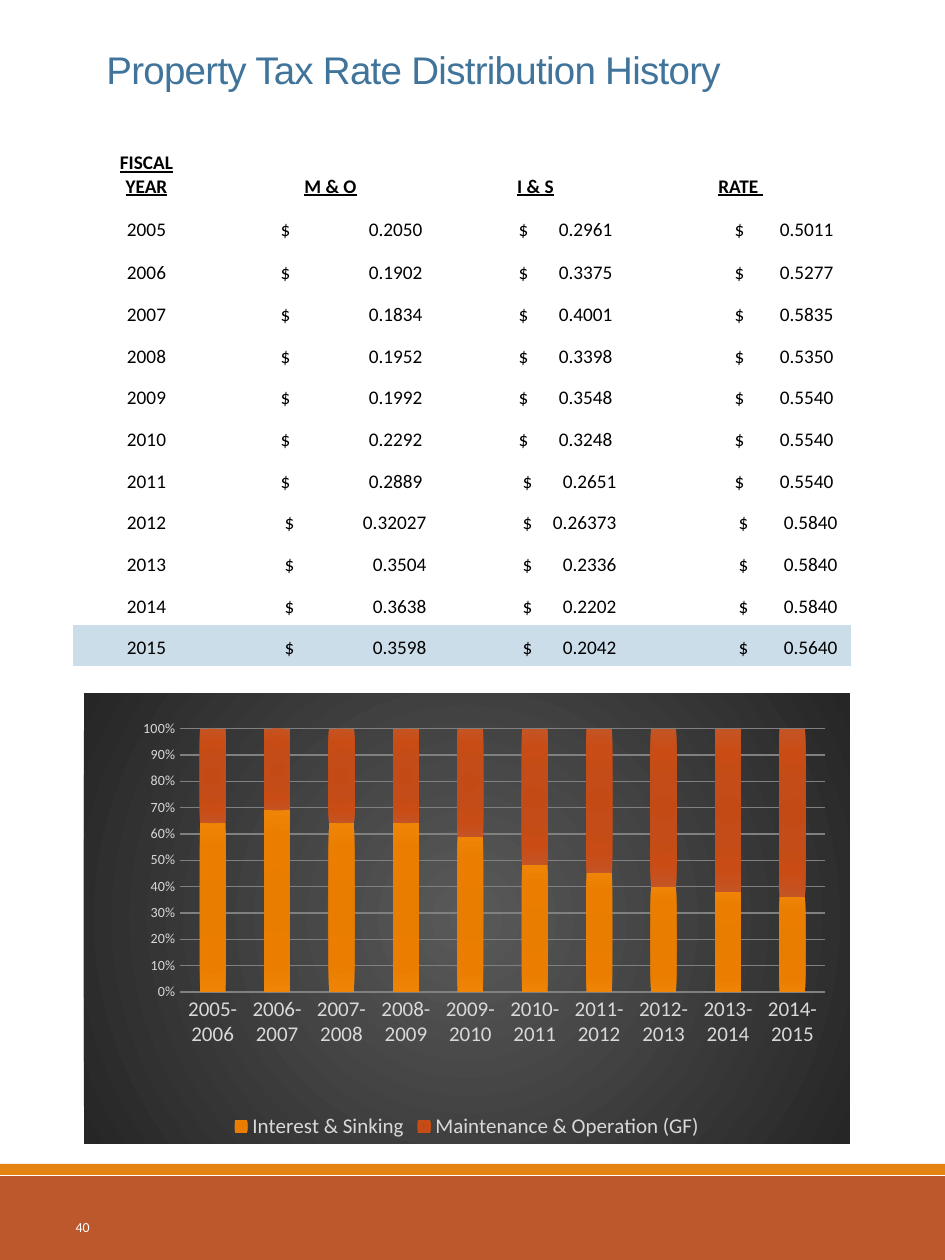
from lxml import etree
from pptx import Presentation
from pptx import util as u
from pptx.chart import data as chart_data
from pptx.dml.color import RGBColor
from pptx.enum import chart as ch, shapes, text
from pptx.oxml import ns, parse_xml

SCALE = 914400 / 126
WHITE = RGBColor(0xFF, 0xFF, 0xFF)
BLACK = RGBColor(0x00, 0x00, 0x00)
RUST = RGBColor(0xBD, 0x58, 0x2C)
ORANGE = RGBColor(0xE4, 0x83, 0x12)
TITLE_BLUE = RGBColor(0x40, 0x74, 0x9B)
HIGHLIGHT = RGBColor(0xCC, 0xDD, 0xEA)
LIGHT_GRAY = RGBColor(0xD9, 0xD9, 0xD9)
GRID_GRAY = RGBColor(0x80, 0x80, 0x80)
BACKDROP_STOPS = [(0, RGBColor(0x59, 0x59, 0x59)), (100, RGBColor(0x26, 0x26, 0x26))]
SINKING_STOPS = [(0, RGBColor(0xE5, 0x7B, 0x00)), (34, RGBColor(0xE8, 0x7D, 0x00)),
                 (70, RGBColor(0xEB, 0x7E, 0x00)), (100, RGBColor(0xEF, 0x84, 0x07))]
OPERATION_STOPS = [(0, RGBColor(0xC4, 0x4A, 0x15)), (34, RGBColor(0xC3, 0x4C, 0x18)),
                   (70, RGBColor(0xC9, 0x4C, 0x15)), (100, RGBColor(0xC4, 0x55, 0x25))]
NO_TABLE_STYLE = "{2D5ABB26-0587-4C30-8999-92F81FD0307C}"

HEADINGS = ["FISCAL\nYEAR", "M & O", "I & S", "RATE "]
RATES = [
    ("2005", "0.2050", "0.2961", "0.5011"),
    ("2006", "0.1902", "0.3375", "0.5277"),
    ("2007", "0.1834", "0.4001", "0.5835"),
    ("2008", "0.1952", "0.3398", "0.5350"),
    ("2009", "0.1992", "0.3548", "0.5540"),
    ("2010", "0.2292", "0.3248", "0.5540"),
    ("2011", "0.2889", "0.2651", "0.5540"),
    ("2012", "0.32027", "0.26373", "0.5840"),
    ("2013", "0.3504", "0.2336", "0.5840"),
    ("2014", "0.3638", "0.2202", "0.5840"),
    ("2015", "0.3598", "0.2042", "0.5640"),
]
COLUMN_WIDTHS = [147, 221, 189, 221]
ROW_HEIGHTS = [63, 111, 43, 43] + [42, 42, 41] * 3
RATE_TABS = [(48, 190), (65, 159), (92, 191)]
SINKING_SHARES = [64, 69, 64, 64, 59, 48, 45, 40, 38, 36]


def px(length):
    """Turn pixels into EMU."""
    return u.Emu(round(length * SCALE))


def style_font(font, size, color, name="Calibri"):
    """Set the size, colour and family of a font."""
    font.size, font.name = u.Pt(size), name
    font.color.rgb = color


def add_band(slide, top, height, color):
    """Draw a full-width footer band."""
    band = slide.shapes.add_shape(shapes.MSO_SHAPE.RECTANGLE, 0, px(top), px(945), px(height))
    band.shadow.inherit = False
    band.fill.solid()
    band.fill.fore_color.rgb = color
    band.line.fill.background()


def add_label(slide, box, words, anchor, align):
    """Add a one-run text box and return its shape, paragraph and run."""
    label = slide.shapes.add_textbox(*map(px, box))
    label.text_frame.word_wrap = True
    label.text_frame.vertical_anchor = anchor
    paragraph = label.text_frame.paragraphs[0]
    paragraph.alignment = align
    run = paragraph.add_run()
    run.text = words
    return label, paragraph, run


def add_title(slide):
    """Add the slide heading."""
    heading, paragraph, run = add_label(
        slide, (94, 2, 851, 134), "Property Tax Rate Distribution History",
        text.MSO_ANCHOR.BOTTOM, text.PP_ALIGN.LEFT)
    heading.fill.solid()
    heading.fill.fore_color.rgb = WHITE
    heading.text_frame.margin_bottom = px(44)
    paragraph.line_spacing = 0.85
    style_font(run.font, 22, TITLE_BLUE, "Arial")
    run.font._element.set("spc", "-40")


def add_page_number(slide):
    """Add the page number on the footer band."""
    _, _, run = add_label(slide, (0, 1193, 102, 67), "40",
                          text.MSO_ANCHOR.MIDDLE, text.PP_ALIGN.RIGHT)
    style_font(run.font, 7.9, WHITE)


def set_tabs(paragraph, dollar, number_end):
    """Give a paragraph a left tab for the sign and a right tab for the number."""
    tabs = etree.SubElement(paragraph._p.get_or_add_pPr(), ns.qn("a:tabLst"))
    for position, align in ((dollar, "l"), (number_end, "r")):
        etree.SubElement(tabs, ns.qn("a:tab"), pos=str(px(position)), algn=align)


def fill_cell(cell, words, heading=False, tabs=None):
    """Write one table cell, one paragraph per line."""
    cell.vertical_anchor = text.MSO_ANCHOR.BOTTOM
    for index, line in enumerate(words.split("\n")):
        frame = cell.text_frame
        paragraph = frame.add_paragraph() if index else frame.paragraphs[0]
        paragraph.alignment = text.PP_ALIGN.LEFT if tabs else text.PP_ALIGN.CENTER
        if tabs:
            set_tabs(paragraph, *tabs)
        run = paragraph.add_run()
        run.text = line
        style_font(run.font, 11, BLACK)
        run.font.bold = run.font.underline = heading


def add_rate_table(slide):
    """Add the table of yearly tax rates."""
    frame = slide.shapes.add_table(len(ROW_HEIGHTS), len(COLUMN_WIDTHS), px(73), px(31),
                                   px(sum(COLUMN_WIDTHS)), px(sum(ROW_HEIGHTS)))
    table = frame.table
    table.first_row = table.horz_banding = False
    table._tbl.tblPr.find(ns.qn("a:tableStyleId")).text = NO_TABLE_STYLE
    for column, width in zip(table.columns, COLUMN_WIDTHS):
        column.width = px(width)
    for row, height in zip(table.rows, ROW_HEIGHTS):
        row.height = px(height)
    for cell in table.iter_cells():
        cell.fill.background()
    for column, heading in enumerate(HEADINGS):
        fill_cell(table.cell(1, column), heading, heading=True)
    for row, (year, *rates) in enumerate(RATES, 2):
        fill_cell(table.cell(row, 0), year)
        for column, (rate, tabs) in enumerate(zip(rates, RATE_TABS), 1):
            shift = 4 if year >= "2012" or (year, column) == ("2011", 2) else 0
            fill_cell(table.cell(row, column), f"\t$\t{rate}",
                      tabs=[position + shift for position in tabs])
    for cell in table.rows[len(ROW_HEIGHTS) - 1].cells:
        cell.fill.solid()
        cell.fill.fore_color.rgb = HIGHLIGHT


def radial_fill(stops, focus):
    """Build a circular gradient fill centred on a percentage."""
    marks = "".join(f'<a:gs pos="{position * 1000}"><a:srgbClr val="{color}"/></a:gs>'
                    for position, color in stops)
    edges = " ".join(f'{side}="{focus * 1000}"' for side in "ltrb")
    return parse_xml(f'<a:gradFill {ns.nsdecls("a")} rotWithShape="1"><a:gsLst>{marks}</a:gsLst>'
                     f'<a:path path="circle"><a:fillToRect {edges}/></a:path></a:gradFill>')


def place_plot(chart):
    """Fix the inner plot area as fractions of the chart."""
    area = chart._chartSpace.chart.plotArea
    for old in area.findall(ns.qn("c:layout")):
        area.remove(old)
    parts = "".join(f'<c:{key} val="{value}"/>' for key, value in (
        ("layoutTarget", "inner"), ("xMode", "edge"), ("yMode", "edge"),
        ("x", 0.126), ("y", 0.079), ("w", 0.841), ("h", 0.584)))
    area.insert(0, parse_xml(f'<c:layout {ns.nsdecls("c")}><c:manualLayout>{parts}'
                             '</c:manualLayout></c:layout>'))


def style_axis(axis, size):
    """Hide an axis line and ticks and set its labels."""
    axis.major_tick_mark = axis.minor_tick_mark = ch.XL_TICK_MARK.NONE
    axis.format.line.fill.background()
    style_font(axis.tick_labels.font, size, LIGHT_GRAY)


def add_share_chart(slide):
    """Add the stacked chart of how the rate is split."""
    shares = chart_data.CategoryChartData()
    shares.categories = [f"{year}-{year + 1}" for year in range(2005, 2015)]
    shares.add_series("Interest & Sinking", SINKING_SHARES)
    shares.add_series("Maintenance & Operation (GF)", [100 - share for share in SINKING_SHARES])
    chart = slide.shapes.add_chart(ch.XL_CHART_TYPE.COLUMN_STACKED_100, px(84), px(693),
                                   px(766), px(451), shares).chart
    style_font(chart.font, 10, BLACK)
    chart.has_title = False
    backdrop = parse_xml(f'<c:spPr {ns.nsdecls("c", "a")}><a:ln><a:noFill/></a:ln></c:spPr>')
    backdrop.insert(0, radial_fill(BACKDROP_STOPS, 50))
    chart._chartSpace.chart.addnext(backdrop)
    place_plot(chart)
    plot = chart.plots[0]
    plot.gap_width, plot.overlap, plot.vary_by_categories = 150, 100, False
    for series, stops in zip(plot.series, (SINKING_STOPS, OPERATION_STOPS)):
        series._element.get_or_add_spPr().insert(0, radial_fill(stops, 100))
    style_axis(chart.category_axis, 12)
    percent = chart.value_axis
    style_axis(percent, 8)
    percent.maximum_scale, percent.major_unit = 1, 0.1
    percent.tick_labels.number_format = "0%"
    percent.tick_labels.number_format_is_linked = False
    percent.major_gridlines.format.line.color.rgb = GRID_GRAY
    percent.major_gridlines.format.line.width = u.Pt(0.75)
    chart.has_legend = True
    chart.legend.position = ch.XL_LEGEND_POSITION.BOTTOM
    chart.legend.include_in_layout = False
    style_font(chart.legend.font, 12, LIGHT_GRAY)


def main():
    """Build the slide and save it."""
    deck = Presentation()
    deck.slide_width, deck.slide_height = px(945), px(1260)
    slide = deck.slides.add_slide(deck.slide_layouts[6])
    add_band(slide, 1176, 84, RUST)
    add_band(slide, 1164, 11, ORANGE)
    add_page_number(slide)
    add_title(slide)
    add_rate_table(slide)
    add_share_chart(slide)
    deck.save("out.pptx")


if __name__ == "__main__":
    main()
